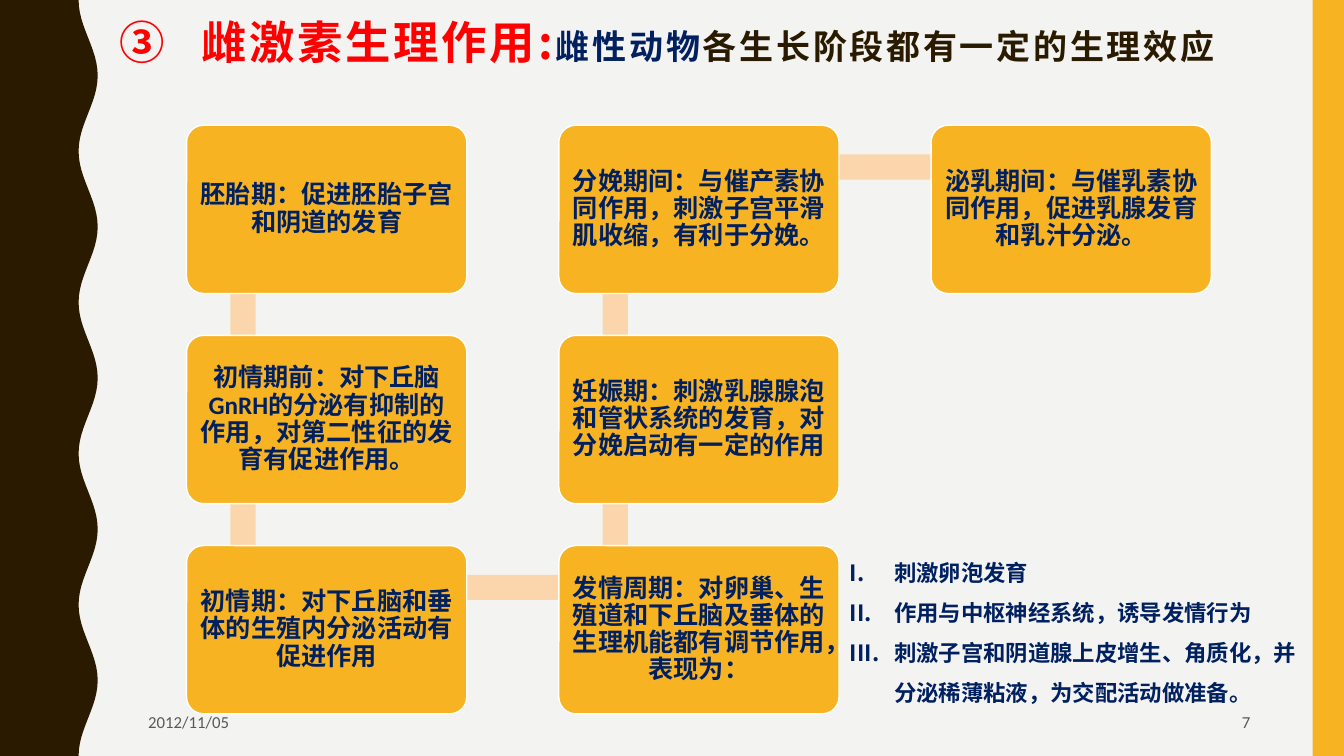
import math
from dataclasses import dataclass

import pptx
import pptx.dml.color
import pptx.enum.shapes
import pptx.enum.text
import pptx.oxml.ns
import pptx.util
from lxml import etree

SHAPE = pptx.enum.shapes.MSO_SHAPE
ALIGN = pptx.enum.text.PP_ALIGN
ANCHOR = pptx.enum.text.MSO_ANCHOR


@dataclass(frozen=True)
class Theme:
    wide: float = 13.33
    high: float = 7.5
    paper: str = "F3F3F2"
    dark: str = "2A1A00"
    gold: str = "F8B323"
    peach: str = "FBD6AC"
    navy: str = "002060"
    red: str = "FF0000"
    gray: str = "595959"
    white: str = "FFFFFF"
    latin: str = "Calibri"
    asian: str = "Noto Sans CJK SC"
    lead: float = 32.4
    head: float = 24.3
    stage: float = 18
    item: float = 16
    foot: float = 12


def color(code):
    return pptx.dml.color.RGBColor.from_string(code)


def number(para, kind, indent, start=1):
    """Number a paragraph, with a hanging indent in inches."""
    props = para._p.get_or_add_pPr()
    props.set("marL", str(pptx.util.Inches(indent)))
    props.set("indent", str(-pptx.util.Inches(indent)))
    mark = etree.Element(pptx.oxml.ns.qn("a:buAutoNum"), type=kind)
    if start > 1:
        mark.set("startAt", str(start))
    rest = props.find(pptx.oxml.ns.qn("a:defRPr"))
    if rest is None:
        props.append(mark)
    else:
        rest.addprevious(mark)


class Board:
    """One slide; places and sizes are percent of its width and height."""

    def __init__(self, theme):
        self.theme = theme
        self.deck = pptx.Presentation()
        self.deck.slide_width = pptx.util.Inches(theme.wide)
        self.deck.slide_height = pptx.util.Inches(theme.high)
        self.slide = self.deck.slides.add_slide(self.deck.slide_layouts[5])
        self.slide.background.fill.solid()
        self.slide.background.fill.fore_color.rgb = color(theme.paper)

    def area(self, x, y, w, h):
        across, down = self.deck.slide_width / 100, self.deck.slide_height / 100
        return [round(v) for v in (x * across, y * down, w * across, h * down)]

    def paint(self, shape, fill, line=None):
        shape.shadow.inherit = False
        shape.fill.solid()
        shape.fill.fore_color.rgb = color(fill)
        if line:
            shape.line.color.rgb = color(line)
            shape.line.width = pptx.util.Pt(1)
        else:
            shape.line.fill.background()

    def style(self, font, size, tint, bold=True, latin=None):
        font.size = pptx.util.Pt(size)
        font.bold = bold
        font.color.rgb = color(tint)
        font.name = latin or self.theme.latin
        face = etree.Element(pptx.oxml.ns.qn("a:ea"), typeface=self.theme.asian)
        font._element.find(pptx.oxml.ns.qn("a:latin")).addnext(face)

    def title(self, box, parts):
        """Fill the title from (text, size, colour) parts."""
        shape = self.slide.shapes.title
        shape.left, shape.top, shape.width, shape.height = self.area(*box)
        frame = shape.text_frame
        frame.word_wrap = True
        frame.auto_size = pptx.enum.text.MSO_AUTO_SIZE.NONE
        frame.vertical_anchor = ANCHOR.MIDDLE
        para = frame.paragraphs[0]
        para.alignment = ALIGN.LEFT
        para.line_spacing = 0.9
        number(para, "circleNumDbPlain", 0.81, 3)
        for text, size, tint in parts:
            run = para.add_run()
            run.text = text
            self.style(run.font, size, tint, latin=self.theme.asian)
            run.font._element.set("spc", "200")

    def bar(self, box, fill):
        shape = self.slide.shapes.add_shape(SHAPE.RECTANGLE, *self.area(*box))
        self.paint(shape, fill)

    def card(self, box, text):
        shape = self.slide.shapes.add_shape(
            SHAPE.ROUNDED_RECTANGLE, *self.area(*box))
        shape.adjustments[0] = 0.1
        self.paint(shape, self.theme.gold, self.theme.white)
        frame = shape.text_frame
        frame.word_wrap = True
        frame.vertical_anchor = ANCHOR.MIDDLE
        frame.margin_left = frame.margin_right = pptx.util.Inches(0.07)
        frame.margin_top = frame.margin_bottom = pptx.util.Inches(0.07)
        para = frame.paragraphs[0]
        para.text = text
        para.alignment = ALIGN.CENTER
        para.line_spacing = 0.9
        self.style(para.font, self.theme.stage, self.theme.navy)

    def note(self, box, text, align=ALIGN.LEFT):
        shape = self.slide.shapes.add_textbox(*self.area(*box))
        frame = shape.text_frame
        frame.word_wrap = True
        frame.vertical_anchor = ANCHOR.MIDDLE
        para = frame.paragraphs[0]
        para.text = text
        para.alignment = align
        self.style(para.font, self.theme.foot, self.theme.gray, bold=False)

    def points(self, box, items):
        frame = self.slide.shapes.add_textbox(*self.area(*box)).text_frame
        frame.word_wrap = True
        for i, text in enumerate(items):
            para = frame.add_paragraph() if i else frame.paragraphs[0]
            para.text = text
            para.line_spacing = 1.5
            self.style(para.font, self.theme.item, self.theme.navy)
            number(para, "romanUcPeriod", 0.44)

    def wave(self, mid, swing, turns, fill):
        """Fill the left edge up to a cosine wave."""
        count = turns * 24
        edge = []
        for i in range(count + 1):
            turn = math.cos(2 * math.pi * turns * i / count)
            edge.append(self.area(mid - swing * turn, 100 * i / count, 0, 0)[:2])
        form = self.slide.shapes.build_freeform(0, 0)
        form.add_line_segments(edge + [(0, self.deck.slide_height)], close=True)
        self.paint(form.convert_to_shape(), fill)


STAGES = [
    (0, 0, "胚胎期：促进胚胎子宫和阴道的发育"),
    (0, 1, "初情期前：对下丘脑GnRH的分泌有抑制的作用，对第二性征的发育有促进作用。"),
    (0, 2, "初情期：对下丘脑和垂体的生殖内分泌活动有促进作用"),
    (1, 2, "发情周期：对卵巢、生殖道和下丘脑及垂体的生理机能都有调节作用，表现为："),
    (1, 1, "妊娠期：刺激乳腺腺泡和管状系统的发育，对分娩启动有一定的作用"),
    (1, 0, "分娩期间：与催产素协同作用，刺激子宫平滑肌收缩，有利于分娩。"),
    (2, 0, "泌乳期间：与催乳素协同作用，促进乳腺发育和乳汁分泌。"),
]
EFFECTS = [
    "刺激卵泡发育",
    "作用与中枢神经系统，诱导发情行为",
    "刺激子宫和阴道腺上皮增生、角质化，并分泌稀薄粘液，为交配活动做准备。",
]


def place(col, row):
    return 13.88 + 27.7 * col, 16.57 + 27.8 * row


def main():
    theme = Theme()
    board = Board(theme)
    board.wave(6.56, 0.71, 5, theme.dark)
    board.bar((97.67, 0, 2.33, 100), theme.gold)
    board.title((8.13, 1.6, 86.27, 8.67), [
        ("雌激素生理作用:", theme.lead, theme.red),
        ("雌性动物", theme.head, theme.navy),
        ("各生长阶段都有一定的生理效应", theme.head, theme.dark),
    ])
    thick, tall = 1.88, 3.33
    for (col, row, _), (col2, row2, _) in zip(STAGES, STAGES[1:]):
        x, y = place(min(col, col2), min(row, row2))
        x, y = x + 4.2, y + 5.53
        if col == col2:
            board.bar((x - thick / 2, y, thick, 27.8), theme.peach)
        else:
            board.bar((x, y - tall / 2, 27.7, tall), theme.peach)
    for col, row, text in STAGES:
        board.card((*place(col, row), 20.85, 22.25), text)
    board.note((10.28, 92.93, 19.13, 5.07), "2012/11/05")
    board.note((70.67, 92.93, 23.1, 5.07), "7", ALIGN.RIGHT)
    board.points((62.5, 71.47, 35.63, 27.6), EFFECTS)
    board.deck.save("out.pptx")


if __name__ == "__main__":
    main()
